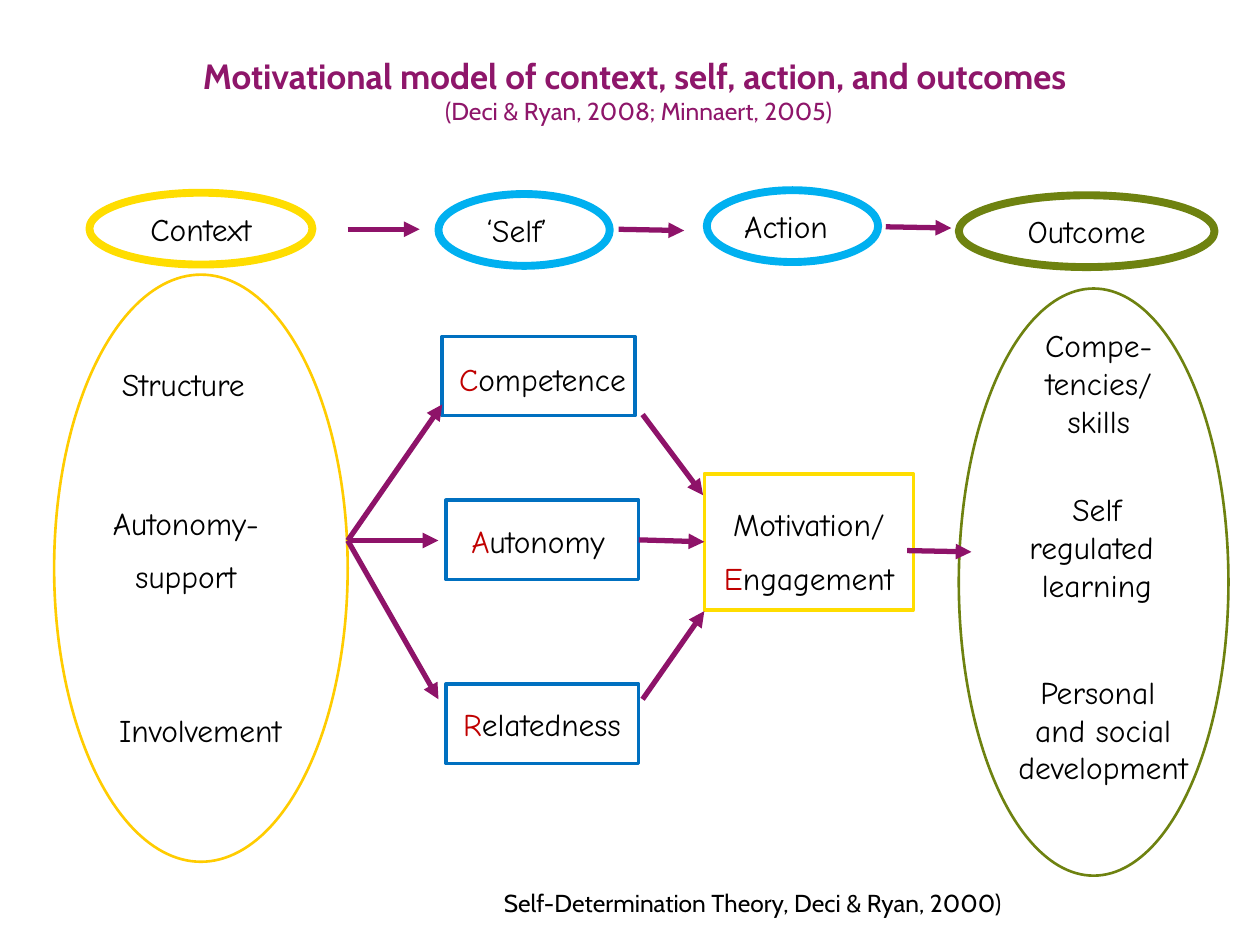
from lxml import etree
from pptx import Presentation
from pptx import util as u
from pptx.dml.color import RGBColor
from pptx.enum import shapes, text
from pptx.oxml import ns

PX = 9144
COLORS = {
    "purple": "8E1369", "title": "8E166A", "yellow": "FFDD00", "gold": "FFCC00",
    "cyan": "00B0F0", "blue": "0070C0", "olive": "6E8210", "red": "C00000",
    "black": "000000", "white": "FFFFFF",
}
LABEL = {"name": "Comic Neue", "size": u.Pt(18)}
CITATION = {"name": "Cabin", "size": u.Pt(14), "bold": False}
HEADING = {"name": "Cabin", "size": u.Pt(20), "bold": True}
CENTER, LEFT = text.PP_ALIGN.CENTER, text.PP_ALIGN.LEFT
OVAL, RECTANGLE = shapes.MSO_SHAPE.OVAL, shapes.MSO_SHAPE.RECTANGLE


def color(name):
    return RGBColor.from_string(COLORS[name])


def emu(*lengths):
    return [u.Emu(length * PX) for length in lengths]


def within(box, offset):
    return box[0] + offset[0], box[1] + offset[1], *offset[2:]


def add_run(paragraph, wording, style, tint="black"):
    run = paragraph.add_run()
    run.text = wording
    for key, value in style.items():
        setattr(run.font, key, value)
    run.font.color.rgb = color(tint)


def write_lines(frame, lines, align=CENTER, gap=0, style=LABEL):
    for index, line in enumerate(lines):
        paragraph = frame.add_paragraph() if index else frame.paragraphs[0]
        paragraph.alignment = align
        paragraph.space_before = u.Pt(gap if index else 0)
        initial, _, rest = line.rpartition("|")
        if initial:
            add_run(paragraph, initial, style, "red")
        add_run(paragraph, rest, style)


def add_outline(slide, kind, box, line, width, fill=None):
    shape = slide.shapes.add_shape(kind, *emu(*box))
    shape.shadow.inherit = False
    if fill:
        shape.fill.solid()
        shape.fill.fore_color.rgb = color(fill)
    else:
        shape.fill.background()
    shape.line.color.rgb = color(line)
    shape.line.width = u.Pt(width)
    return shape


def add_label(slide, box, lines, **options):
    label = slide.shapes.add_textbox(*emu(*box))
    label.text_frame.word_wrap = False
    write_lines(label.text_frame, lines, **options)


def add_arrow(slide, start, end):
    arrow = slide.shapes.add_connector(
        shapes.MSO_CONNECTOR.STRAIGHT, *emu(*start, *end))
    arrow.line.color.rgb = color("purple")
    arrow.line.width = u.Pt(3)
    etree.SubElement(arrow.line._get_or_add_ln(), ns.qn("a:tailEnd"), type="triangle")
    etree.SubElement(arrow._element.spPr, ns.qn("a:effectLst"))
    return arrow


def draw_title(slide, box):
    title = slide.shapes.title
    title.left, title.top, title.width, title.height = emu(*box)
    frame = title.text_frame
    settings = {"margin_left": 0, "margin_top": 0, "margin_right": 0, "margin_bottom": 0,
                "word_wrap": True, "auto_size": text.MSO_AUTO_SIZE.NONE,
                "vertical_anchor": text.MSO_ANCHOR.TOP}
    for key, value in settings.items():
        setattr(frame, key, value)
    paragraph = frame.paragraphs[0]
    paragraph.alignment = CENTER
    add_run(paragraph, "Motivational model of context, self, action, and outcomes ",
            HEADING, "title")
    paragraph.add_line_break()
    add_run(paragraph, "(Deci & Ryan, 2008; Minnaert, 2005)", CITATION, "title")


def draw_stages(slide, box):
    stages = [
        ("Context", (0, 2, 177, 57), "yellow", CENTER),
        (" ‘Self’", (277, 3, 136, 57), "cyan", LEFT),
        ("Action", (490, 0, 136, 57), "cyan", LEFT),
        ("Outcome", (690, 4, 203, 57), "olive", CENTER),
    ]
    for wording, offset, line, align in stages:
        stage = add_outline(slide, OVAL, within(box, offset), line, 4.5, "white")
        frame = stage.text_frame
        frame.vertical_anchor = text.MSO_ANCHOR.MIDDLE
        frame.word_wrap = True
        write_lines(frame, [wording], align)
    for start, end in [((205, 31), (262, 31)), ((420, 31), (472, 32)), ((632, 29), (684, 30))]:
        add_arrow(slide, within(box, start), within(box, end))


def draw_oval_column(slide, box, line, labels, gap=0):
    add_outline(slide, OVAL, box, line, 1.5)
    for offset, lines in labels:
        add_label(slide, within(box, offset), lines, gap=gap)


def draw_needs(slide, box):
    needs = [
        ("C|ompetence", (0, 0), (-1, 14, 161, 40)),
        ("A|utonomy", (3, 130), (8, 142, 136, 40)),
        ("R|elatedness", (3, 276), (-2, 288, 162, 40)),
    ]
    frames = []
    for wording, corner, label in needs:
        frames.append(add_outline(
            slide, RECTANGLE, within(box, (*corner, 153, 63)), "blue", 2))
        add_label(slide, within(box, label), [wording])
    return frames


def draw_engagement(slide, box):
    shape = add_outline(slide, RECTANGLE, box, "yellow", 2, "white")
    frame = shape.text_frame
    frame.word_wrap = True
    frame.vertical_anchor = text.MSO_ANCHOR.TOP
    frame.margin_top, frame.margin_bottom = emu(25, 0)
    write_lines(frame, ["Motivation/", "E|ngagement"], gap=9)
    return shape


def draw_flow(slide, autonomy, engagement):
    source = (276, 429)
    for end in [(348, 429), (351, 321), (348, 555)]:
        add_arrow(slide, source, end)
    for start, end in [((510, 329), (558, 393)), ((510, 555), (559, 485)),
                       ((720, 437), (771, 438))]:
        add_arrow(slide, start, end)
    arrow = add_arrow(slide, (507, 429), (559, 429))
    arrow.begin_connect(autonomy, 3)
    arrow.end_connect(engagement, 1)


def main():
    presentation = Presentation()
    presentation.slide_width, presentation.slide_height = emu(1000, 750)
    slide = presentation.slides.add_slide(presentation.slide_layouts[5])
    draw_title(slide, (64, 43, 886, 79))
    draw_stages(slide, (71, 151, 893, 61))
    draw_oval_column(slide, (43, 218, 233, 466), "gold", [
        ((33, 67, 139, 40), ["Structure"]),
        ((31, 177, 147, 86), ["Autonomy-", "support"]),
        ((34, 341, 164, 40), ["Involvement"]),
    ], gap=9)
    draw_oval_column(slide, (761, 229, 214, 466), "olive", [
        ((52, 25, 118, 101), ["Compe-", "tencies/", "skills"]),
        ((39, 155, 141, 101), ["Self", "regulated ", "learning"]),
        ((31, 300, 167, 101), ["Personal ", "and social", "development"]),
    ])
    needs = draw_needs(slide, (351, 267, 156, 339))
    engagement = draw_engagement(slide, (559, 376, 166, 108))
    draw_flow(slide, needs[1], engagement)
    add_label(slide, (390, 700, 432, 34),
              ["Self-Determination Theory, Deci & Ryan, 2000)"], align=LEFT, style=CITATION)
    presentation.save("out.pptx")


if __name__ == "__main__":
    main()
